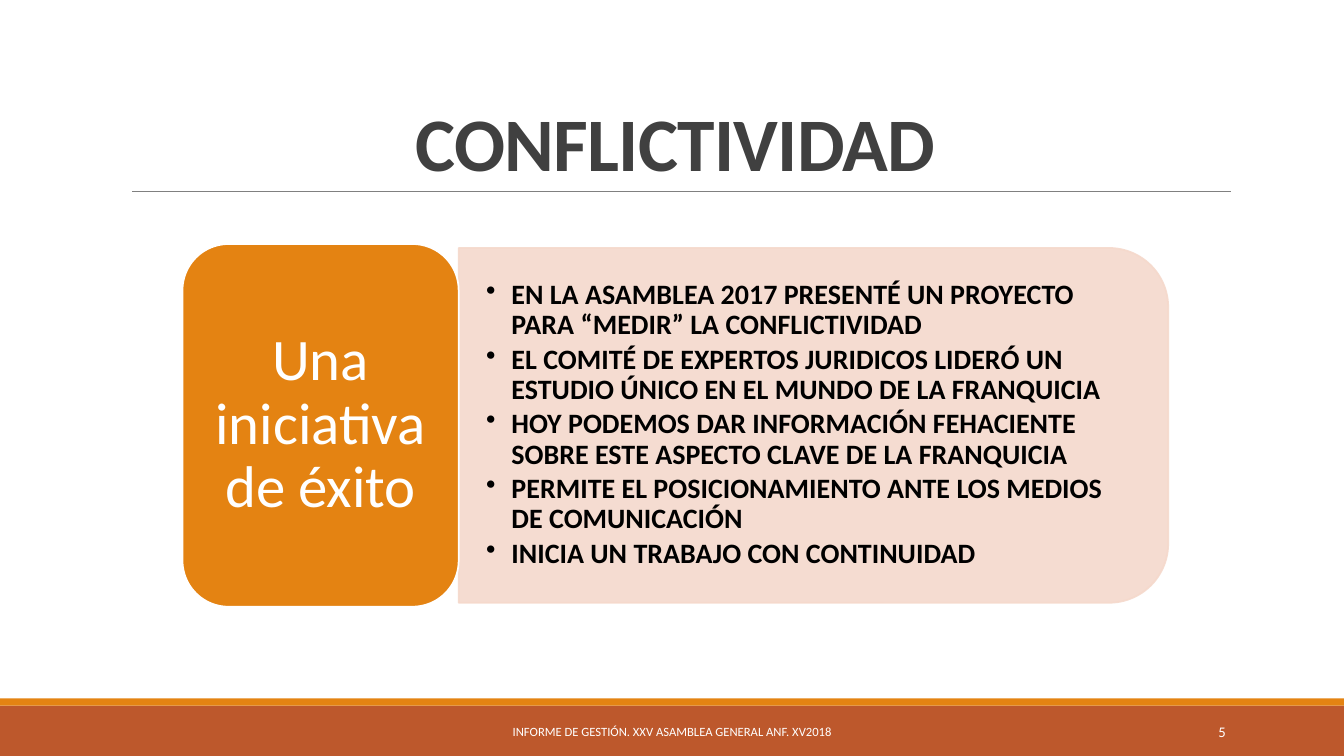
from pptx import Presentation
from pptx.dml.color import RGBColor
from pptx.enum.shapes import MSO_CONNECTOR, MSO_SHAPE
from pptx.enum.text import MSO_ANCHOR, PP_ALIGN
from pptx.oxml.ns import qn
from pptx.util import Cm, Pt
from lxml import etree

ORANGE = RGBColor(0xE4, 0x83, 0x12)
RUST = RGBColor(0xBD, 0x58, 0x2C)
PEACH = RGBColor(0xF5, 0xD9, 0xCC)
GREY = RGBColor(0x80, 0x80, 0x80)
DARK = RGBColor(0x40, 0x40, 0x40)
BLACK = RGBColor(0, 0, 0)
WHITE = RGBColor(255, 255, 255)
LEFT, CENTER, RIGHT = PP_ALIGN.LEFT, PP_ALIGN.CENTER, PP_ALIGN.RIGHT
MIDDLE, BOTTOM = MSO_ANCHOR.MIDDLE, MSO_ANCHOR.BOTTOM

prs = Presentation()
prs.slide_width, prs.slide_height = Cm(33.87), Cm(19.05)
slide = prs.slides.add_slide(prs.slide_layouts[6])


def add_block(kind, box, fill, line=None):
    block = slide.shapes.add_shape(kind, *map(Cm, box))
    block.shadow.inherit = False
    block.fill.solid()
    block.fill.fore_color.rgb = fill
    if line is None:
        block.line.fill.background()
    else:
        block.line.color.rgb = line
        block.line.width = Pt(1.25)
    return block


def add_text(box, lines, size, color, align, bold=False, anchor=MIDDLE,
             inset=(0.25, 0.13), spacing=1.0, after=0):
    frame = slide.shapes.add_textbox(*map(Cm, box)).text_frame
    frame.word_wrap = True
    frame.vertical_anchor = anchor
    frame.margin_left = frame.margin_right = Cm(inset[0])
    frame.margin_top = frame.margin_bottom = Cm(inset[1])
    frame.text = "\n".join(lines)
    for paragraph in frame.paragraphs:
        paragraph.alignment = align
        paragraph.line_spacing = spacing
        paragraph.space_after = Pt(after)
        paragraph.font.name = "Calibri"
        paragraph.font.size = Pt(size)
        paragraph.font.bold = bold
        paragraph.font.color.rgb = color
    return frame


add_block(MSO_SHAPE.RECTANGLE, (0, 17.78, 33.87, 1.27), RUST)
add_block(MSO_SHAPE.RECTANGLE, (0, 17.6, 33.87, 0.18), ORANGE)

title_rule = slide.shapes.add_connector(
    MSO_CONNECTOR.STRAIGHT, Cm(3.33), Cm(4.82), Cm(31.01), Cm(4.82))
title_rule.line.color.rgb = GREY
title_rule.line.width = Pt(0.5)
etree.SubElement(title_rule._element.spPr, qn("a:effectLst"))

title = add_text((3.05, 0.79, 27.94, 4.04), ["CONFLICTIVIDAD"], 54, DARK, CENTER,
                 bold=True, anchor=BOTTOM, spacing=0.85)
title.paragraphs[0].runs[0]._r.get_or_add_rPr().set("spc", "-50")

panel = add_block(MSO_SHAPE.ROUND_2_SAME_RECTANGLE, (16.03, 1.78, 8.94, 17.88), PEACH, PEACH)
panel.rotation = 90
for color in panel._element.spPr.iter(qn("a:srgbClr")):
    etree.SubElement(color, qn("a:alpha")).set("val", "90000")

points = add_text(
    (11.56, 6.68, 17.45, 8.05),
    ["EN LA ASAMBLEA 2017 PRESENTÉ UN PROYECTO PARA “MEDIR” LA CONFLICTIVIDAD",
     "EL COMITÉ DE EXPERTOS JURIDICOS LIDERÓ UN ESTUDIO ÚNICO EN EL MUNDO DE LA FRANQUICIA",
     "HOY PODEMOS DAR INFORMACIÓN FEHACIENTE SOBRE ESTE ASPECTO CLAVE DE LA FRANQUICIA",
     "PERMITE EL POSICIONAMIENTO ANTE LOS MEDIOS DE COMUNICACIÓN",
     "INICIA UN TRABAJO CON CONTINUIDAD"],
    20, BLACK, LEFT, bold=True, inset=(0.69, 0.36), spacing=0.9, after=3)
for point in points.paragraphs:
    properties = point._p.get_or_add_pPr()
    properties.set("marL", str(Cm(0.64)))
    properties.set("indent", str(-Cm(0.64)))
    bullet = etree.Element(qn("a:buChar"), char="•")
    properties.find(qn("a:spcAft")).addnext(bullet)

add_block(MSO_SHAPE.ROUNDED_RECTANGLE, (4.6, 6.15, 6.96, 9.14), ORANGE, WHITE)
add_text((4.93, 6.48, 6.3, 8.46), ["Una iniciativa de éxito"], 42, WHITE, CENTER,
         inset=(0.43, 0.23), spacing=0.9, after=14.7)

add_text((10.24, 17.93, 13.39, 1.02),
         ["INFORME DE GESTIÓN. XXV ASAMBLEA GENERAL ANF. XV2018"], 9, WHITE, CENTER)
add_text((27.51, 17.93, 3.63, 1.02), ["5"], 10.5, WHITE, RIGHT)

prs.save("out.pptx")
